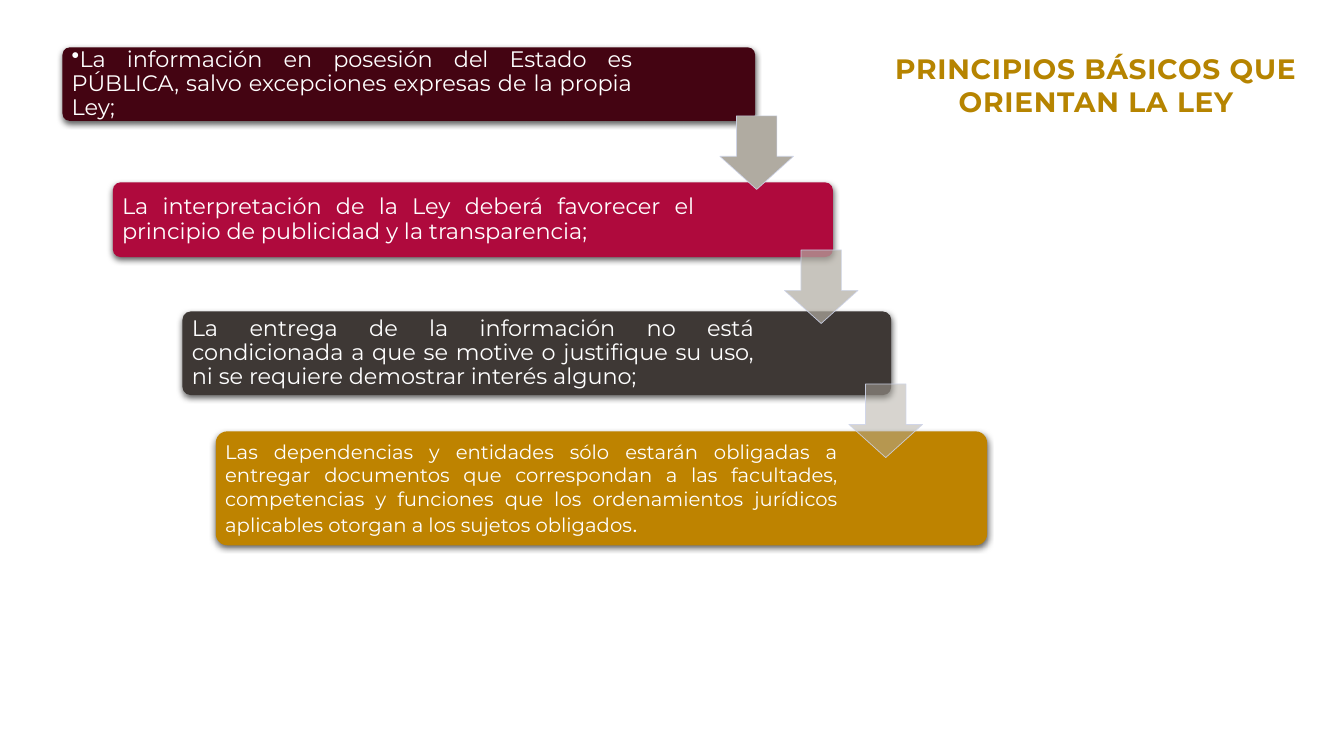
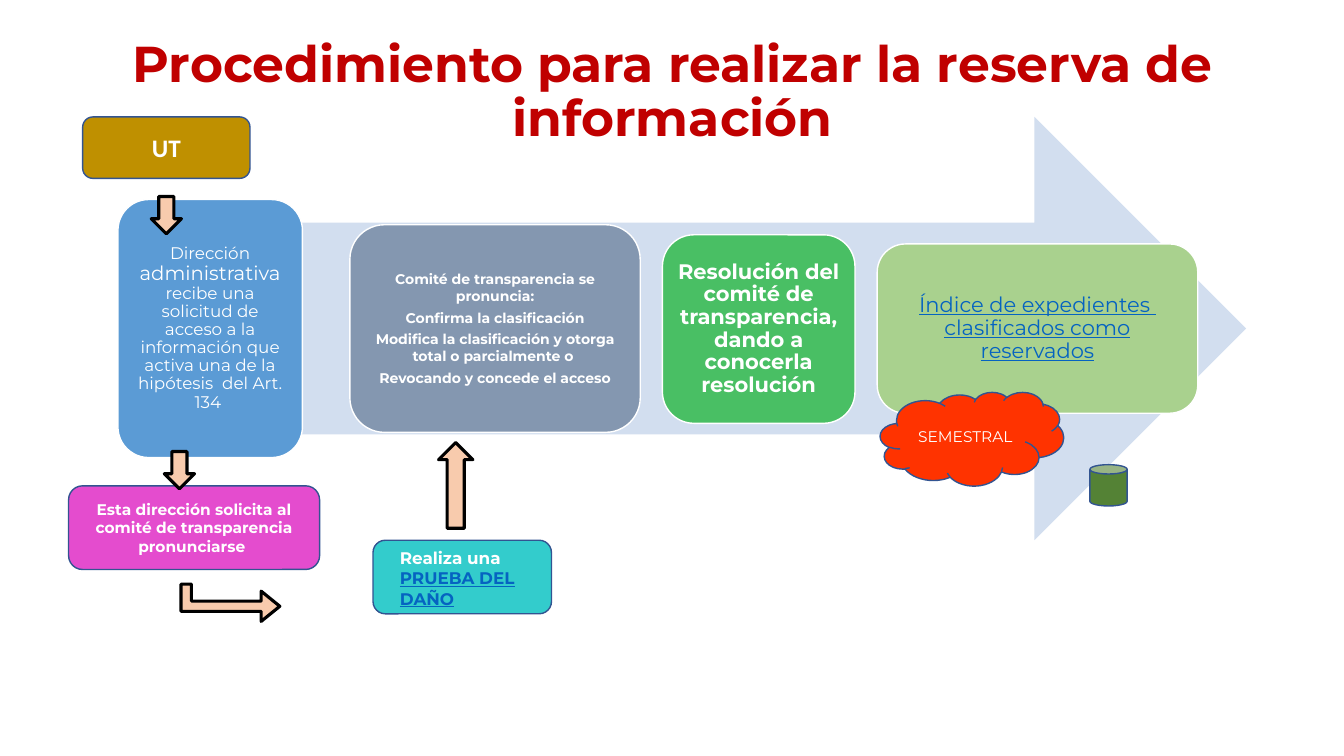
from lxml import etree
from pptx import Presentation
from pptx.dml.color import RGBColor
from pptx.enum.shapes import MSO_SHAPE
from pptx.enum.text import MSO_ANCHOR, PP_ALIGN
from pptx.oxml.ns import qn
from pptx.util import Inches, Pt

ROUNDED = MSO_SHAPE.ROUNDED_RECTANGLE
DOWN_ARROW = MSO_SHAPE.DOWN_ARROW
RIGHT_ARROW = MSO_SHAPE.RIGHT_ARROW
BENT_ARROW = MSO_SHAPE.BENT_UP_ARROW
CLOUD = MSO_SHAPE.CLOUD
CAN = MSO_SHAPE.CAN
LEFT, CENTER, JUSTIFY = PP_ALIGN.LEFT, PP_ALIGN.CENTER, PP_ALIGN.JUSTIFY
TOP, MIDDLE = MSO_ANCHOR.TOP, MSO_ANCHOR.MIDDLE

SLIDE_WIDTH, SLIDE_HEIGHT = Inches(13.33), Inches(7.5)
COLUMN = ROW = Inches(0.5)
FONT = "Montserrat"
LABEL_FONT = "Calibri"
DEFAULT_INSETS = (7.2, 3.6, 7.2, 3.6)

WHITE = RGBColor(0xFF, 0xFF, 0xFF)
BLACK = RGBColor(0x00, 0x00, 0x00)
HEADING_GOLD = RGBColor(0xB6, 0x84, 0x00)
HEADING_RED = RGBColor(0xC0, 0x00, 0x00)
WINE = RGBColor(0x44, 0x04, 0x12)
CRIMSON = RGBColor(0xAF, 0x0A, 0x3D)
CHARCOAL = RGBColor(0x3E, 0x38, 0x35)
OCHRE = RGBColor(0xBE, 0x83, 0x00)
STONE = RGBColor(0xB0, 0xAB, 0xA1)
PALE_LINE = RGBColor(0xCF, 0xD5, 0xEA)
PALE_BLUE = RGBColor(0xD2, 0xDE, 0xEF)
BLUE = RGBColor(0x5B, 0x9B, 0xD5)
SLATE = RGBColor(0x84, 0x97, 0xB0)
GREEN = RGBColor(0x49, 0xBF, 0x64)
LIGHT_GREEN = RGBColor(0xA9, 0xD1, 0x8E)
DARK_GREEN = RGBColor(0x54, 0x82, 0x35)
MAGENTA = RGBColor(0xE4, 0x4C, 0xCE)
TURQUOISE = RGBColor(0x33, 0xCC, 0xCC)
PEACH = RGBColor(0xF8, 0xCB, 0xAD)
RED = RGBColor(0xFF, 0x33, 0x00)
GOLD = RGBColor(0xBF, 0x90, 0x00)
NAVY_LINE = RGBColor(0x32, 0x54, 0x91)
LINK_BLUE = RGBColor(0x05, 0x63, 0xC1)

PRINCIPLES = [
    ((1.24, 0.94, 13.74, 1.46), WINE, (5, 5, 86, 5), 0.9,
     [("La información en posesión del Estado es PÚBLICA, salvo excepciones "
       "expresas de la propia Ley;", 16)]),
    ((2.24, 3.62, 14.28, 1.48), CRIMSON, (5, 5, 97, 5), 0.9,
     [("La interpretación de la Ley deberá favorecer el principio de "
       "publicidad y la transparencia;", 16)]),
    ((3.62, 6.18, 14.06, 1.66), CHARCOAL, (5, 5, 96, 5), 0.9,
     [("La entrega de la información no está condicionada a que se motive o "
       "justifique su uso, ni se requiere demostrar interés alguno;", 16)]),
    ((4.28, 8.56, 15.3, 2.26), OCHRE, (4.3, 4.3, 104, 4.3), 1,
     [("Las dependencias y entidades sólo estarán obligadas a entregar "
       "documentos que correspondan a las facultades, competencias y funciones "
       "que los ordenamientos jurídicos aplicables otorgan a los sujetos "
       "obligados", 14), (".", 16)]),
]

STAGES = [
    ((2.34, 3.96, 3.66, 5.12), BLUE, 3.6, 0.9, WHITE, {},
     [[("Dirección ", 12), ("administrativa", 14),
       (" recibe una solicitud de acceso a la información que activa una de "
        "la hipótesis  del Art. 134 ", 12)]]),
    ((6.94, 4.46, 5.76, 4.12), SLATE, 3, 1, WHITE, {"bold": True},
     [[("Comité de transparencia se pronuncia:", 10)],
      [("Confirma la clasificación", 10)],
      [("Modifica la clasificación y otorga total o parcialmente o ", 10)],
      [("Revocando y concede el acceso", 10)]]),
    ((13.14, 4.66, 3.82, 3.74), GREEN, 4.3, 0.9, WHITE, {"bold": True},
     [[("Resolución del comité de transparencia, dando a conocerla resolución", 15)]]),
    ((17.4, 4.84, 6.36, 3.36), LIGHT_GREEN, 4.3, 0.9, LINK_BLUE, {"underline": True},
     [[("Índice de expedientes  clasificados como reservados", 15)]]),
]


def cells(box):
    left, top, width, height = box
    return (round(left * COLUMN), round(top * ROW),
            round(width * COLUMN), round(height * ROW))


def add_shape(slide, kind, box, fill, line=None, line_width=1, adjustments=(), rotation=0):
    shape = slide.shapes.add_shape(kind, *cells(box))
    shape.shadow.inherit = False
    shape.fill.solid()
    shape.fill.fore_color.rgb = fill
    if line is None:
        shape.line.fill.background()
    else:
        shape.line.color.rgb = line
        shape.line.width = Pt(line_width)
    for index, value in enumerate(adjustments):
        shape.adjustments[index] = value
    shape.rotation = rotation
    return shape


def set_alpha(color, percent):
    etree.SubElement(color, qn("a:alpha")).set("val", str(percent * 1000))


def add_shadow(shape):
    effects = shape.element.spPr.find(qn("a:effectLst"))
    shadow = etree.SubElement(effects, qn("a:outerShdw"), blurRad=str(Pt(4.5)),
                              dist=str(Pt(1.5)), dir="5400000", rotWithShape="0")
    color = etree.SubElement(shadow, qn("a:srgbClr"), val=str(BLACK))
    set_alpha(color, 63)


def add_bullet(paragraph):
    properties = paragraph._p.get_or_add_pPr()
    properties.set("marL", "0")
    properties.set("indent", "0")
    etree.SubElement(properties, qn("a:buChar"), char="•")


def set_frame(shape, insets=DEFAULT_INSETS, anchor=MIDDLE):
    frame = shape.text_frame
    frame.word_wrap = True
    frame.vertical_anchor = anchor
    frame.margin_left, frame.margin_top, frame.margin_right, frame.margin_bottom = map(Pt, insets)
    return frame


def add_run(paragraph, text, size, color=WHITE, bold=False, underline=False, font=FONT):
    run = paragraph.add_run()
    run.text = text
    run.font.name = font
    run.font.size = Pt(size)
    run.font.bold = bold
    run.font.underline = underline
    run.font.color.rgb = color
    return run


def write(frame, paragraphs, alignment=CENTER, spacing=1, gap=0, **style):
    for index, runs in enumerate(paragraphs):
        paragraph = frame.add_paragraph() if index else frame.paragraphs[0]
        paragraph.alignment = alignment
        paragraph.line_spacing = spacing
        paragraph.space_after = Pt(gap)
        for text, size in runs:
            add_run(paragraph, text, size, **style)


def add_title(slide, box, text, size, color, anchor=MIDDLE, spacing=1, tracking=0):
    frame = set_frame(slide.shapes.add_textbox(*cells(box)), anchor=anchor)
    paragraph = frame.paragraphs[0]
    paragraph.alignment = CENTER
    paragraph.line_spacing = spacing
    run = add_run(paragraph, text, size, color, bold=True)
    run.font._element.set("spc", str(tracking))


def add_label(slide, kind, box, fill, text, size, **style):
    shape = add_shape(slide, kind, box, fill, NAVY_LINE)
    write(set_frame(shape), [[(text, size)]], **style)


def add_pointer(slide, box, kind=DOWN_ARROW, **options):
    add_shape(slide, kind, box, PEACH, BLACK, 2.25, **options)


def build_principles(slide):
    add_title(slide, (16.82, 0.92, 9.84, 1.54), "PRINCIPIOS BÁSICOS QUE ORIENTAN LA LEY",
              20, HEADING_GOLD, anchor=TOP, tracking=50)
    for index, (box, fill, insets, spacing, runs) in enumerate(PRINCIPLES):
        shape = add_shape(slide, ROUNDED, box, fill, adjustments=(0.1,))
        add_shadow(shape)
        frame = set_frame(shape, insets)
        if index == 0:
            add_bullet(frame.paragraphs[0])
        write(frame, [runs], JUSTIFY, spacing)
    for index, opacity in enumerate((100, 70, 50)):
        box = (14.28 + 1.28 * index, 2.3 + 2.66 * index, 1.46, 1.46)
        arrow = add_shape(slide, DOWN_ARROW, box, STONE, PALE_LINE, 0.5, (0.55, 0.45))
        fill_color, line_color = arrow.element.spPr.iter(qn("a:srgbClr"))
        set_alpha(fill_color, opacity)
        set_alpha(line_color, 90)


def build_procedure(slide):
    add_title(slide, (1.84, 0.4, 23, 2.9),
              "Procedimiento para realizar la reserva de información",
              36, HEADING_RED, spacing=0.9)
    add_shape(slide, RIGHT_ARROW, (3.64, 2.32, 21.08, 8.4), PALE_BLUE)
    for box, fill, inset, spacing, color, style, paragraphs in STAGES:
        shape = add_shape(slide, ROUNDED, box, fill, WHITE)
        write(set_frame(shape, (inset,) * 4), paragraphs, spacing=spacing,
              gap=3.5, color=color, **style)

    add_label(slide, ROUNDED, (1.36, 9.64, 4.98, 1.66), MAGENTA,
              "Esta dirección solicita al comité de transparencia pronunciarse ", 11, bold=True)
    proof = add_shape(slide, ROUNDED, (7.4, 10.72, 3.54, 1.46), TURQUOISE, NAVY_LINE)
    frame = set_frame(proof, (16.6, 3, 5, 0), TOP)
    write(frame, [[("Realiza una ", 12)]], LEFT, bold=True)
    add_run(frame.paragraphs[0], "PRUEBA DEL DAÑO", 12, LINK_BLUE, bold=True, underline=True)

    add_pointer(slide, (4.2, 10.98, 0.74, 1.96), BENT_ARROW,
                adjustments=(0.278, 0.405, 0.5), rotation=90)
    add_pointer(slide, (3.26, 8.96, 0.6, 0.74))
    add_label(slide, CLOUD, (17.46, 7.78, 3.64, 1.86), RED, "SEMESTRAL", 11)
    add_shape(slide, CAN, (21.62, 9.22, 0.74, 0.82), DARK_GREEN, NAVY_LINE)
    add_pointer(slide, (8.7, 8.78, 0.68, 1.7), rotation=180)
    add_label(slide, ROUNDED, (1.64, 2.32, 3.32, 1.22), GOLD, "UT", 18,
              bold=True, font=LABEL_FONT)
    add_pointer(slide, (3, 3.9, 0.6, 0.74))


def main():
    presentation = Presentation()
    presentation.slide_width, presentation.slide_height = SLIDE_WIDTH, SLIDE_HEIGHT
    blank = presentation.slide_layouts[6]
    for build in (build_principles, build_procedure):
        build(presentation.slides.add_slide(blank))
    presentation.save("out.pptx")


if __name__ == "__main__":
    main()
